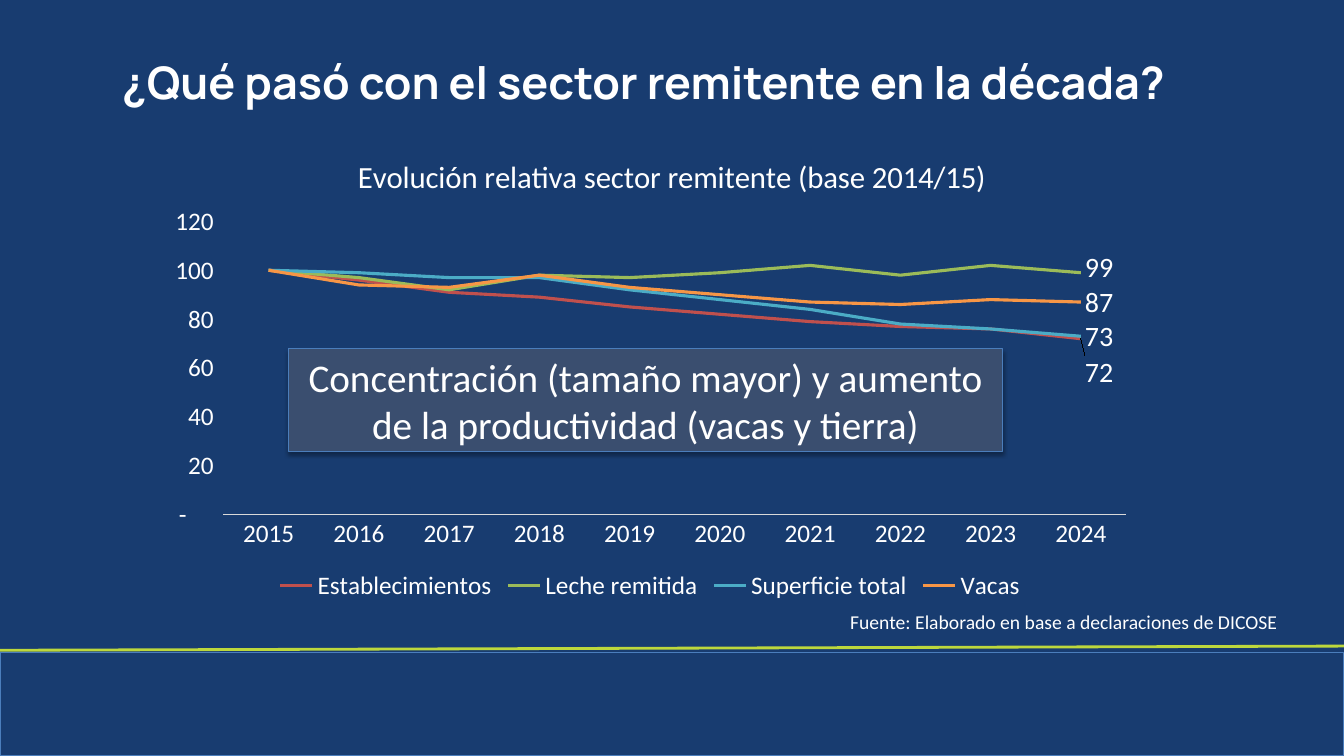
from lxml import etree
from pptx import Presentation
from pptx import util as u
from pptx.chart.data import CategoryChartData
from pptx.dml.color import RGBColor
from pptx.enum import chart as ch, shapes, text
from pptx.oxml import parse_xml
from pptx.oxml.ns import nsdecls, qn

NAVY = RGBColor(0x18, 0x3C, 0x70)
SLATE = RGBColor(0x3A, 0x4E, 0x6F)
BLUE = RGBColor(0x4B, 0x7E, 0xBC)
LIME = RGBColor(0xBD, 0xD8, 0x3C)
WHITE = RGBColor(0xFF, 0xFF, 0xFF)
GREY = RGBColor(0xD9, 0xD9, 0xD9)
RED = RGBColor(0xC0, 0x50, 0x4D)
GREEN = RGBColor(0x9B, 0xBB, 0x59)
TEAL = RGBColor(0x4B, 0xAC, 0xC6)
ORANGE = RGBColor(0xF7, 0x96, 0x46)

YEARS = [str(year) for year in range(2015, 2025)]
SERIES = [
    ("Establecimientos", RED, (100, 96, 91, 89, 85, 82, 79, 77, 76, 72), (0, 0.07)),
    ("Leche remitida", GREEN, (100, 97, 92, 98, 97, 99, 102, 98, 102, 99), (0, -0.01)),
    ("Superficie total", TEAL, (100, 99, 97, 97, 92, 88, 84, 78, 76, 73), (0, 0)),
    ("Vacas", ORANGE, (100, 94, 93, 98, 93, 90, 87, 86, 88, 87), (0, 0)),
]


def set_font(font, size, name="Calibri", bold=False):
    for key, value in {"size": u.Pt(size), "name": name, "bold": bold}.items():
        setattr(font, key, value)
    font.color.rgb = WHITE


def write(sp, words, size, name="Calibri", bold=False):
    tf = sp.text_frame
    formats = {"word_wrap": True, "vertical_anchor": text.MSO_ANCHOR.MIDDLE}
    for key, value in formats.items():
        setattr(tf, key, value)
    p = tf.paragraphs[0]
    p.alignment = text.PP_ALIGN.CENTER
    r = p.add_run()
    r.text = words
    set_font(r.font, size, name, bold)


def set_layout(parent, index, **values):
    for old in parent.findall(qn("c:layout")):
        parent.remove(old)
    layout = etree.Element(qn("c:layout"))
    manual = etree.SubElement(layout, qn("c:manualLayout"))
    for key, value in values.items():
        etree.SubElement(manual, qn("c:" + key)).set("val", str(value))
    parent.insert(index, layout)


def add_title(s, box):
    sp = s.shapes.title
    for key, value in zip(("left", "top", "width", "height"), box):
        setattr(sp, key, u.Pt(value))
    write(sp, "¿Qué pasó con el sector remitente en la década?", 32, "Manrope", True)


def add_panel(s, box, fill):
    sp = s.shapes.add_shape(shapes.MSO_SHAPE.RECTANGLE, *map(u.Pt, box))
    sp.fill.solid()
    sp.fill.fore_color.rgb = fill
    sp.line.color.rgb = BLUE
    sp.line.width = u.Pt(0.75)
    sp._element.spPr.append(parse_xml(
        f'<a:effectLst {nsdecls("a")}>'
        f'<a:outerShdw blurRad="{u.Pt(3.1)}" dist="{u.Pt(1.8)}" dir="5400000" rotWithShape="0">'
        '<a:srgbClr val="000000"><a:alpha val="35000"/></a:srgbClr>'
        '</a:outerShdw></a:effectLst>'))
    return sp


def add_footer(s, box):
    left, top, width, height = box
    add_panel(s, box, NAVY)
    rule = s.shapes.add_connector(
        shapes.MSO_CONNECTOR.STRAIGHT,
        u.Pt(left), u.Pt(top - 1.5), u.Pt(left + width), u.Pt(top - 4.5))
    rule.line.color.rgb = LIME
    rule.line.width = u.Pt(2)
    etree.SubElement(rule._element.spPr, qn("a:effectLst"))
    source = s.shapes.add_textbox(
        u.Pt(left + 570), u.Pt(top - 34), u.Pt(380), u.Pt(24.5))
    write(source, "Fuente: Elaborado en base a declaraciones de DICOSE", 14)


def format_axes(chart):
    for axis in (chart.category_axis, chart.value_axis):
        formats = {
            "major_tick_mark": ch.XL_TICK_MARK.NONE,
            "minor_tick_mark": ch.XL_TICK_MARK.NONE,
            "has_major_gridlines": False,
        }
        for key, value in formats.items():
            setattr(axis, key, value)
        set_font(axis.tick_labels.font, 18)
    chart.category_axis.format.line.color.rgb = GREY
    chart.category_axis.format.line.width = u.Pt(0.75)
    axis = chart.value_axis
    for key, value in {"minimum_scale": 0, "maximum_scale": 120, "major_unit": 20}.items():
        setattr(axis, key, value)
    axis.format.line.fill.background()
    axis.tick_labels.number_format = '_-* #,##0_-;\\-* #,##0_-;_-* "-"??_-;_-@_'
    axis.tick_labels.number_format_is_linked = False


def format_series(line, color, shift):
    line.smooth = False
    line.marker.style = ch.XL_MARKER_STYLE.NONE
    line.format.line.color.rgb = color
    line.format.line.width = u.Pt(2.25)
    label = line.points[len(YEARS) - 1].data_label
    set_font(label.font, 20)
    label.position = ch.XL_LABEL_POSITION.RIGHT
    if any(shift):
        set_layout(label._get_or_add_dLbl(), 1, x=shift[0], y=shift[1])


def add_evolution_chart(s, box):
    data = CategoryChartData(number_format="0")
    data.categories = YEARS
    for name, _, values, _ in SERIES:
        data.add_series(name, values)
    chart = s.shapes.add_chart(ch.XL_CHART_TYPE.LINE, *map(u.Pt, box), data).chart
    set_font(chart.font, 10)

    chart.has_title = True
    title = chart.chart_title
    p = title.text_frame.paragraphs[0]
    r = p.add_run()
    r.text = "Evolución relativa sector remitente (base 2014/15)"
    set_font(r.font, 22)
    set_layout(title._element, 1, xMode="edge", yMode="edge", x=0.2, y=0.05)

    chart.has_legend = True
    chart.legend.position = ch.XL_LEGEND_POSITION.BOTTOM
    chart.legend.include_in_layout = False
    set_font(chart.legend.font, 18)

    format_axes(chart)
    plot = chart.plots[0]
    plot.vary_by_categories = False
    for line, (_, color, _, shift) in zip(plot.series, SERIES):
        format_series(line, color, shift)
    set_layout(chart._chartSpace.chart.plotArea, 0, layoutTarget="inner",
               xMode="edge", yMode="edge", x=0.07, y=0.2, w=0.91, h=0.61)


def add_callout(s, box):
    sp = add_panel(s, box, SLATE)
    write(sp, "Concentración (tamaño mayor) y aumento de la productividad (vacas y tierra)", 28)


def main():
    prs = Presentation()
    prs.slide_width, prs.slide_height = u.Pt(960), u.Pt(540)
    s = prs.slides.add_slide(prs.slide_layouts[5])
    s.background.fill.solid()
    s.background.fill.fore_color.rgb = NAVY
    add_title(s, (46, 6, 828, 104))
    add_footer(s, (0, 466, 960, 74))
    add_evolution_chart(s, (110, 89.5, 708.5, 343.5))
    add_callout(s, (206, 249, 510, 73.5))
    prs.save("out.pptx")


if __name__ == "__main__":
    main()
